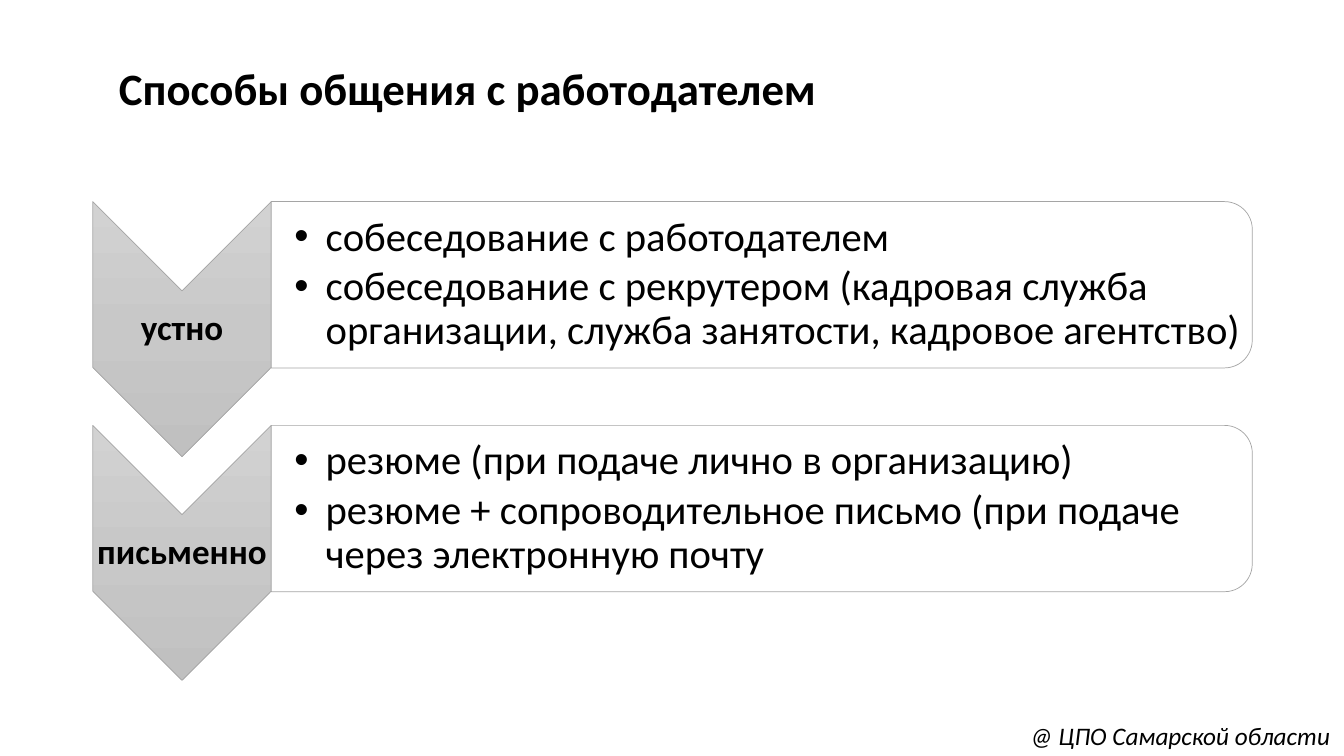
"""Build the slide on ways of communicating with an employer."""
from dataclasses import dataclass

import lxml.etree
import pptx
import pptx.dml.color
import pptx.enum.shapes
import pptx.enum.text
import pptx.oxml
import pptx.oxml.ns
import pptx.util

EMU_PER_PX = 9144
SLIDE_WIDTH, SLIDE_HEIGHT = 1333, 750
SHAPES = pptx.enum.shapes.MSO_SHAPE
ALIGN = pptx.enum.text.PP_ALIGN
ANCHOR = pptx.enum.text.MSO_ANCHOR
AUTO_SIZE = pptx.enum.text.MSO_AUTO_SIZE

TITLE = "Способы общения с работодателем"
FOOTER = "@ ЦПО Самарской области"
WAYS = [
    ("устно", [
        "собеседование с работодателем",
        "собеседование с рекрутером (кадровая служба организации, "
        "служба занятости, кадровое агентство)",
    ]),
    ("письменно", [
        "резюме (при подаче лично в организацию)",
        "резюме + сопроводительное письмо (при подаче через электронную почту",
    ]),
]


@dataclass(frozen=True)
class Theme:
    """Colours and type sizes of the slide."""
    font: str = "Calibri"
    text: str = "000000"
    panel: str = "FFFFFF"
    outline: str = "A5A5A5"
    gradient: tuple = ((0, "D2D2D2"), (50, "C8C8C8"), (100, "C0C0C0"))
    title_size: int = 32
    body_size: int = 29
    label_size: int = 25
    footer_size: int = 18
    line_spacing: float = 0.9
    bullet_gap: float = 4.35


THEME = Theme()


def px(length):
    """Turn pixels into EMU."""
    return pptx.util.Emu(round(length * EMU_PER_PX))


def rgb(value):
    """Make a colour from its hex form."""
    return pptx.dml.color.RGBColor.from_string(value)


def format_paragraph(paragraph, size, bold=False, italic=False, align=ALIGN.LEFT):
    """Set the type and alignment of a paragraph."""
    paragraph.alignment = align
    paragraph.line_spacing = THEME.line_spacing
    font = paragraph.font
    font.name, font.size = THEME.font, pptx.util.Pt(size)
    font.bold, font.italic = bold, italic
    font.color.rgb = rgb(THEME.text)


def add_bullet(paragraph, indent):
    """Give a paragraph a round bullet with a hanging indent."""
    properties = paragraph._p.get_or_add_pPr()
    properties.set("marL", str(px(indent)))
    properties.set("indent", str(-px(indent)))
    bullet_font = lxml.etree.SubElement(properties, pptx.oxml.ns.qn("a:buFont"))
    bullet_font.set("typeface", "Arial")
    bullet = lxml.etree.SubElement(properties, pptx.oxml.ns.qn("a:buChar"))
    bullet.set("char", "•")
    properties.append(properties.find(pptx.oxml.ns.qn("a:defRPr")))


def add_text_frame(slide, left, top, width, height, left_inset=2):
    """Add a wrapping, vertically centred text box and return its frame."""
    frame = slide.shapes.add_textbox(px(left), px(top), px(width), px(height)).text_frame
    frame.word_wrap = True
    frame.vertical_anchor = ANCHOR.MIDDLE
    frame.margin_left = px(left_inset)
    frame.margin_top = frame.margin_right = frame.margin_bottom = px(2)
    return frame


def add_turned_shape(slide, kind, left, top, width, height):
    """Add an outlined shape turned by 90 degrees that fills the given box."""
    shift = (width - height) / 2
    shape = slide.shapes.add_shape(
        kind, px(left + shift), px(top - shift), px(height), px(width))
    shape.rotation = 90
    shape.shadow.inherit = False
    shape.line.color.rgb = rgb(THEME.outline)
    shape.line.width = pptx.util.Pt(0.5)
    return shape


def fill_gradient(shape):
    """Fill a shape from top to bottom with the theme gradient."""
    stops = "".join(
        f'<a:gs pos="{position * 1000}"><a:srgbClr val="{colour}"/></a:gs>'
        for position, colour in THEME.gradient)
    shape.fill.solid()
    solid = shape._element.spPr.find(pptx.oxml.ns.qn("a:solidFill"))
    solid.getparent().replace(solid, pptx.oxml.parse_xml(
        f'<a:gradFill {pptx.oxml.ns.nsdecls("a")} rotWithShape="0">'
        f'<a:gsLst>{stops}</a:gsLst><a:lin ang="5400000" scaled="0"/></a:gradFill>'))


def add_arrow(slide, label, left, top, width, height):
    """Add a downward chevron with its label."""
    fill_gradient(add_turned_shape(slide, SHAPES.CHEVRON, left, top, width, height))
    label_height = height - width
    frame = add_text_frame(slide, left, top + width / 2, width, label_height)
    paragraph = frame.paragraphs[0]
    paragraph.text = label
    format_paragraph(paragraph, THEME.label_size, bold=True, align=ALIGN.CENTER)


def add_panel(slide, items, left, top, width, height):
    """Add a panel rounded on the right with a bulleted list."""
    panel = add_turned_shape(
        slide, SHAPES.ROUND_2_SAME_RECTANGLE, left, top, width, height)
    panel.fill.solid()
    panel.fill.fore_color.rgb = rgb(THEME.panel)
    colour = panel._element.spPr.find(".//" + pptx.oxml.ns.qn("a:srgbClr"))
    lxml.etree.SubElement(colour, pptx.oxml.ns.qn("a:alpha")).set("val", "90000")
    frame = add_text_frame(slide, left, top + 8, width - 8, height - 16, left_inset=23)
    for index, item in enumerate(items):
        paragraph = frame.add_paragraph() if index else frame.paragraphs[0]
        paragraph.text = item
        format_paragraph(paragraph, THEME.body_size)
        paragraph.space_after = pptx.util.Pt(THEME.bullet_gap)
        add_bullet(paragraph, 31)


def add_ways(slide, left, top, width, pitch):
    """Stack one arrow and panel for each way of communicating."""
    arrow_width = 177
    for index, (label, items) in enumerate(WAYS):
        row_top = top + index * pitch
        add_arrow(slide, label, left, row_top, arrow_width, 253)
        add_panel(slide, items, left + arrow_width, row_top, width - arrow_width, 165)


def set_title(slide, left, top, width, height):
    """Place and format the title placeholder."""
    title = slide.shapes.title
    title.left, title.top, title.width, title.height = map(px, (left, top, width, height))
    frame = title.text_frame
    frame.text = TITLE
    frame.auto_size = AUTO_SIZE.NONE
    frame.vertical_anchor = ANCHOR.MIDDLE
    format_paragraph(frame.paragraphs[0], THEME.title_size, bold=True)


def add_footer(slide, left, top, width, height):
    """Add the italic footer line."""
    frame = slide.shapes.add_textbox(px(left), px(top), px(width), px(height)).text_frame
    frame.word_wrap = False
    frame.auto_size = AUTO_SIZE.SHAPE_TO_FIT_TEXT
    paragraph = frame.paragraphs[0]
    paragraph.text = FOOTER
    format_paragraph(paragraph, THEME.footer_size, italic=True)
    paragraph.line_spacing = 1.0


def main():
    """Build and save the presentation."""
    presentation = pptx.Presentation()
    presentation.slide_width, presentation.slide_height = px(SLIDE_WIDTH), px(SLIDE_HEIGHT)
    slide = presentation.slides.add_slide(presentation.slide_layouts[5])
    set_title(slide, 108, 46, 1150, 89)
    add_footer(slide, 1012, 710, 321, 40)
    add_ways(slide, 92, 200, 1150, 222)
    presentation.save("out.pptx")


if __name__ == "__main__":
    main()
